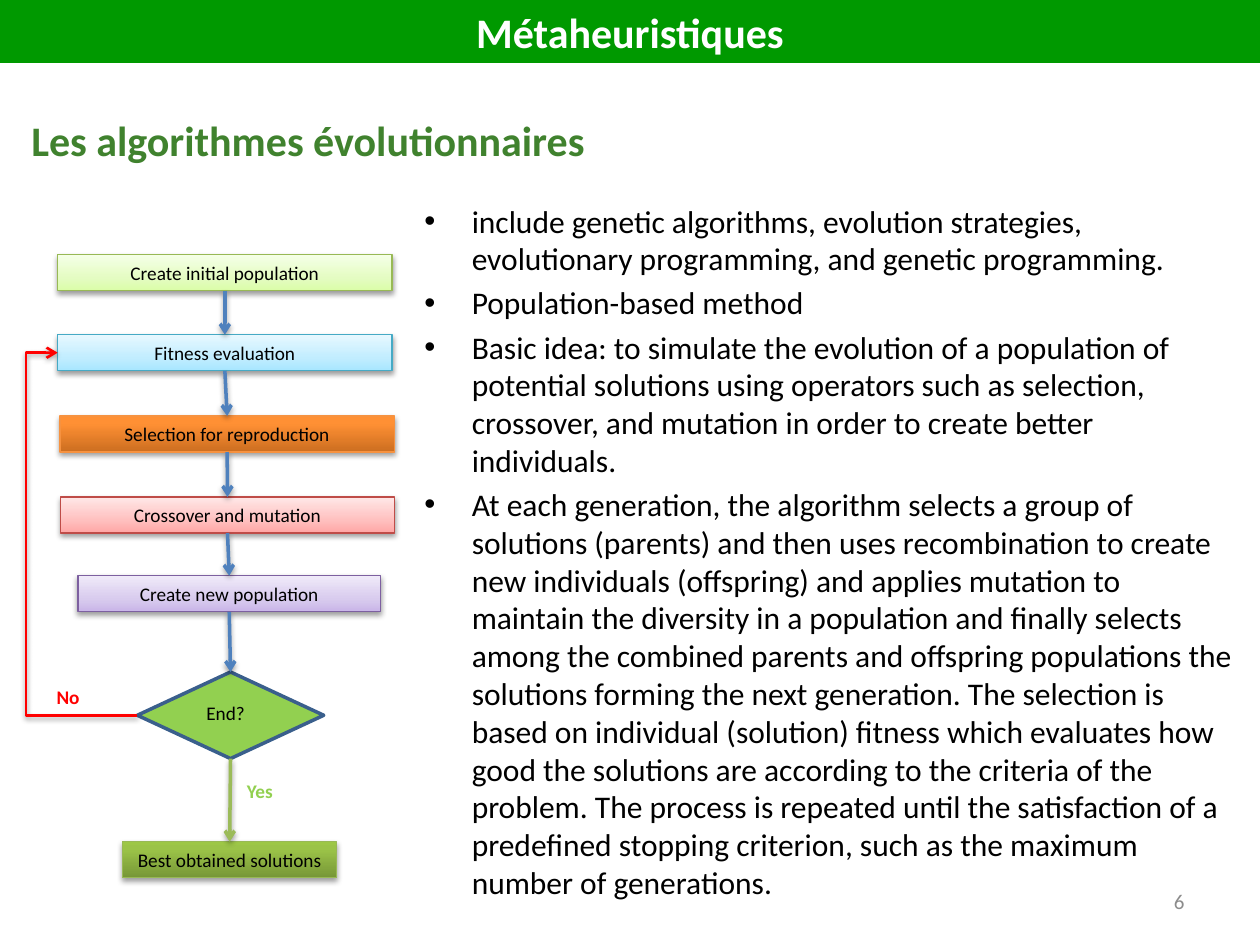
from dataclasses import dataclass

from lxml import etree
from pptx import Presentation
from pptx.dml.color import RGBColor
from pptx.enum.shapes import MSO_CONNECTOR, MSO_SHAPE
from pptx.enum.text import MSO_ANCHOR, PP_ALIGN
from pptx.oxml.ns import qn
from pptx.util import Pt

RECT, DECISION = MSO_SHAPE.RECTANGLE, MSO_SHAPE.FLOWCHART_DECISION
STRAIGHT, ELBOW = MSO_CONNECTOR.STRAIGHT, MSO_CONNECTOR.ELBOW
LEFT, CENTER, RIGHT = PP_ALIGN.LEFT, PP_ALIGN.CENTER, PP_ALIGN.RIGHT
TOP, MIDDLE = MSO_ANCHOR.TOP, MSO_ANCHOR.MIDDLE
TOP_SIDE, LEFT_SIDE, BOTTOM_SIDE = 0, 1, 2


@dataclass(frozen=True)
class Theme:
    font: str = "Calibri"
    title: int = 24
    body: int = 18
    number: int = 12
    label: int = 11
    black: str = "000000"
    white: str = "FFFFFF"
    gray: str = "8C8C8C"
    banner: str = "009900"
    heading: str = "40822E"
    arrow: str = "4F81BD"
    yes_arrow: str = "9BBB59"
    red: str = "FF0000"
    lime: str = "92D050"
    decision_line: str = "3A5F8C"


T = Theme()
BOX_HEIGHT = 20.6

# Text, left, top, width, line colour, gradient stops from the bottom up
STEPS = [
    ("Create initial population", 33, 145.5, 191, "98B955",
     [(0, "DAFDA7"), (35, "E4FCC2"), (100, "F5FFE7")]),
    ("Fitness evaluation", 33, 191.3, 191, "46AAC5",
     [(0, "A7E6FF"), (35, "C1EDFF"), (100, "E7F8FF")]),
    ("Selection for reproduction", 34.3, 237.7, 191, "F69240",
     [(0, "CC6E20"), (80, "FF9034"), (100, "FF9136")]),
    ("Crossover and mutation", 34.5, 284, 191, "BF4C48",
     [(0, "FFA6A5"), (35, "FFC0BF"), (100, "FFE7E7")]),
    ("Create new population", 44.6, 329, 172.8, "7D60A0",
     [(0, "C9B5E8"), (35, "D8CBEE"), (100, "F0EAF9")]),
]
RESULT = ("Best obtained solutions", 70, 481, 122.5, "98B955",
          [(0, "779737"), (80, "9BC348"), (100, "9DC746")])

BULLETS = [
    "include genetic algorithms, evolution strategies, evolutionary programming, "
    "and genetic programming.",
    "Population-based method",
    "Basic idea: to simulate the evolution of a population of potential solutions "
    "using operators such as selection, crossover, and mutation in order to create "
    "better individuals.",
    "At each generation, the algorithm selects a group of solutions (parents) and "
    "then uses recombination to create new individuals (offspring) and applies "
    "mutation to maintain the diversity in a population and finally selects among "
    "the combined parents and offspring populations the solutions forming the next "
    "generation. The selection is based on individual (solution) fitness which "
    "evaluates how good the solutions are according to the criteria of the problem. "
    "The process is repeated until the satisfaction of a predefined stopping "
    "criterion, such as the maximum number of generations.",
]


def rgb(color):
    return RGBColor.from_string(color)


def add_xml(parent, tag, **attrs):
    return etree.SubElement(parent, qn(tag), attrs)


def set_font(p, size, color, bold=False):
    f = p.font
    f.name, f.size, f.bold = T.font, Pt(size), bold
    f.color.rgb = rgb(color)


def write(sp, text, size, color, bold=False, align=LEFT, anchor=TOP, wrap=True):
    tf = sp.text_frame
    tf.word_wrap = wrap
    tf.vertical_anchor = anchor
    p = tf.paragraphs[0]
    p.text, p.alignment = text, align
    set_font(p, size, color, bold)


def add_shadow(effects):
    shadow = add_xml(effects, "a:outerShdw", blurRad="40000", dist="20000",
                     dir="5400000", rotWithShape="0")
    add_xml(add_xml(shadow, "a:srgbClr", val=T.black), "a:alpha", val="38000")


def add_plain_shape(s, kind, x, y, w, h):
    sp = s.shapes.add_shape(kind, Pt(x), Pt(y), Pt(w), Pt(h))
    sp.shadow.inherit = False
    return sp


def add_step(s, text, x, y, w, line, stops):
    sp = add_plain_shape(s, RECT, x, y, w, BOX_HEIGHT)
    sp.fill.gradient()
    sp.fill.gradient_angle = 90
    gs_list = sp._element.spPr.find(".//" + qn("a:gsLst"))
    gs_list.clear()
    for percent, color in stops:
        gs = add_xml(gs_list, "a:gs", pos=str(percent * 1000))
        add_xml(gs, "a:srgbClr", val=color)
    sp.line.color.rgb = rgb(line)
    sp.line.width = Pt(0.75)
    add_shadow(sp._element.spPr.find(qn("a:effectLst")))
    write(sp, text, T.label, T.black, align=CENTER, anchor=MIDDLE, wrap=False)
    return sp


def add_arrow(s, start, end, color, width=2, kind=STRAIGHT,
              sides=(BOTTOM_SIDE, TOP_SIDE)):
    c = s.shapes.add_connector(kind, 0, 0, 0, 0)
    c.begin_connect(start, sides[0])
    c.end_connect(end, sides[1])
    c.line.color.rgb = rgb(color)
    c.line.width = Pt(width)
    spPr = c._element.spPr
    add_xml(spPr.find(qn("a:ln")), "a:tailEnd", type="arrow")
    add_shadow(add_xml(spPr, "a:effectLst"))
    return c


def add_text(s, text, x, y, w, h, size, color, **style):
    tb = s.shapes.add_textbox(Pt(x), Pt(y), Pt(w), Pt(h))
    write(tb, text, size, color, **style)


def add_bullets(s, x, y, w, h):
    tf = s.shapes.add_textbox(Pt(x), Pt(y), Pt(w), Pt(h)).text_frame
    tf.word_wrap = True
    for i, text in enumerate(BULLETS):
        p = tf.add_paragraph() if i else tf.paragraphs[0]
        p.text = text
        p.space_before = Pt(3.6)
        set_font(p, T.body, T.black)
        pPr = p._p.get_or_add_pPr()
        pPr.set("marL", str(Pt(27)))
        pPr.set("indent", str(-Pt(27)))
        bullet_font = etree.Element(qn("a:buFont"), typeface="Arial")
        bullet = etree.Element(qn("a:buChar"), char="•")
        pPr.find(qn("a:spcBef")).addnext(bullet_font)
        bullet_font.addnext(bullet)


def add_flowchart(s):
    steps = [add_step(s, *step) for step in STEPS]
    result = add_step(s, *RESULT)
    decision = add_plain_shape(s, DECISION, 78.5, 384, 106.5, 49.5)
    decision.fill.solid()
    decision.fill.fore_color.rgb = rgb(T.lime)
    decision.line.color.rgb = rgb(T.decision_line)
    decision.line.width = Pt(2)

    for start, end in zip(steps, steps[1:] + [decision]):
        add_arrow(s, start, end, T.arrow)
    add_arrow(s, decision, result, T.yes_arrow)
    loop = add_arrow(s, decision, steps[1], T.red, 1.5, ELBOW,
                     (LEFT_SIDE, LEFT_SIDE))
    geometry = loop._element.spPr.find(qn("a:prstGeom"))
    add_xml(geometry.find(qn("a:avLst")), "a:gd", name="adj1", fmla="val 139700")

    for text, x, y, color, bold in (("No", 25.2, 388, T.red, True),
                                    ("Yes", 134, 442, T.lime, True),
                                    ("End?", 110.8, 397.4, T.black, False)):
        add_text(s, text, x, y, 38, BOX_HEIGHT, T.label, color,
                 bold=bold, wrap=False)


def main():
    prs = Presentation()
    prs.slide_width, prs.slide_height = Pt(720), Pt(540)
    s = prs.slides.add_slide(prs.slide_layouts[6])

    add_flowchart(s)
    add_bullets(s, 235.5, 111.6, 476, 396.7)
    add_text(s, "Les algorithmes évolutionnaires", 10.8, 62, 685.5, 36,
             T.title, T.heading, bold=True)
    banner = add_plain_shape(s, RECT, 0, 0, 720, 36)
    banner.fill.solid()
    banner.fill.fore_color.rgb = rgb(T.banner)
    banner.line.fill.background()
    write(banner, "Métaheuristiques", T.title, T.white, bold=True,
          align=CENTER, anchor=MIDDLE)
    add_text(s, "6", 516, 500.5, 168, 28.8, T.number, T.gray,
             align=RIGHT, anchor=MIDDLE)

    prs.save("out.pptx")


if __name__ == "__main__":
    main()
